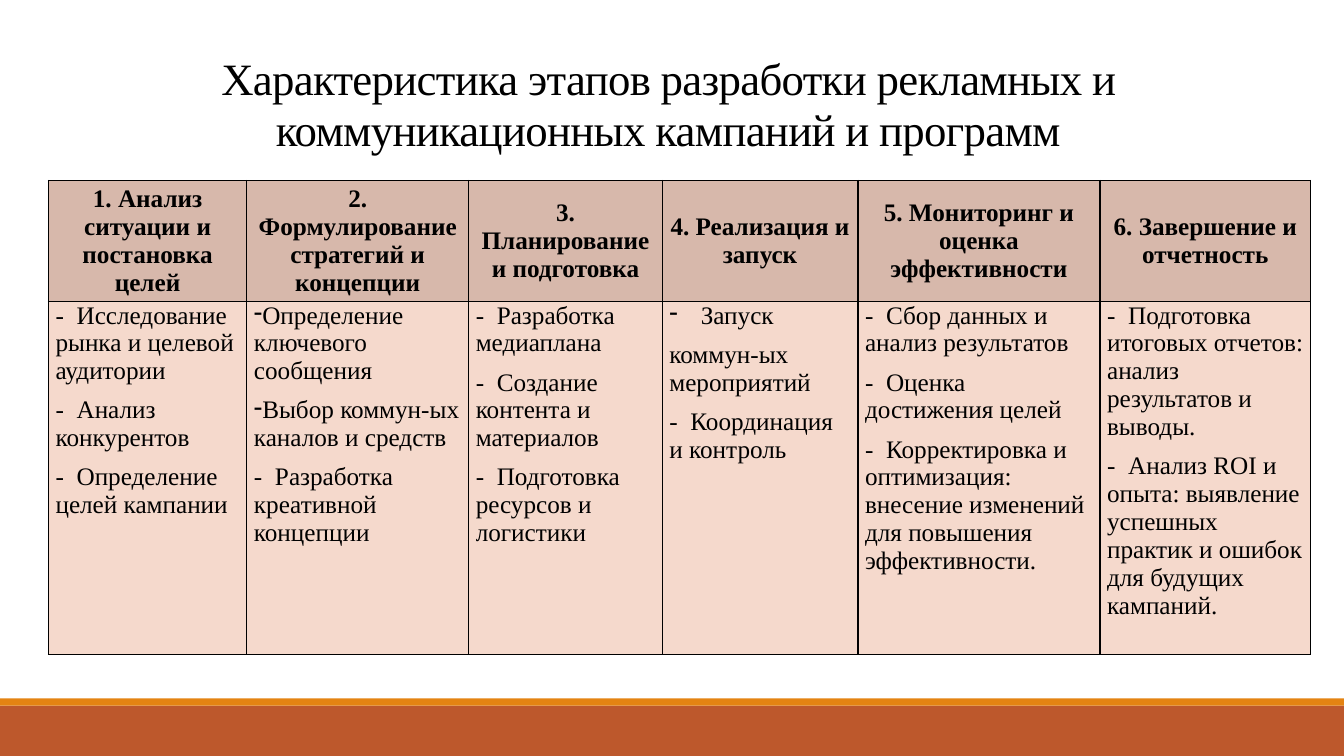
from dataclasses import dataclass

from lxml.etree import SubElement
from pptx import Presentation
from pptx.dml.color import RGBColor
from pptx.enum.shapes import MSO_SHAPE
from pptx.enum.text import MSO_ANCHOR, PP_ALIGN
from pptx.oxml.ns import qn
from pptx.oxml.xmlchemy import OxmlElement
from pptx.slide import Slide
from pptx.table import _Cell
from pptx.text.text import _Paragraph
from pptx.util import Cm, Pt

FONT = "Times New Roman"
BLACK = "000000"
HEADER_FILL = "D7B8AB"
TASKS_FILL = "F5D9CC"
SLIDE_WIDTH = 33.87
SLIDE_HEIGHT = 19.05
TITLE = ("Характеристика этапов разработки рекламных и "
         "коммуникационных кампаний и программ")


@dataclass(frozen=True)
class Band:
    top: float
    height: float
    color: str


@dataclass(frozen=True)
class Task:
    text: str
    bulleted: bool = False
    margin: float = 0


@dataclass(frozen=True)
class Stage:
    name: str
    width: float
    tasks: tuple[Task, ...]


BANDS = (Band(17.78, 1.27, "BD582C"), Band(17.6, 0.18, "E48312"))

STAGES = (
    Stage("1. Анализ ситуации и постановка целей", 5.0, (
        Task("-\tИсследование рынка и целевой аудитории"),
        Task("-\tАнализ конкурентов"),
        Task("-\tОпределение целей кампании"),
    )),
    Stage("2. Формулирование стратегий и концепции", 5.59, (
        Task("Определение ключевого сообщения", bulleted=True),
        Task("Выбор коммун-ых каналов и средств", bulleted=True),
        Task("-\tРазработка креативной концепции"),
    )),
    Stage("3. Планирование и подготовка", 4.88, (
        Task("-\tРазработка медиаплана"),
        Task("-\tСоздание контента и материалов"),
        Task("-\tПодготовка ресурсов и логистики"),
    )),
    Stage("4. Реализация и запуск", 4.93, (
        Task("Запуск", bulleted=True, margin=0.79),
        Task("коммун-ых мероприятий"),
        Task("-\tКоординация и контроль"),
    )),
    Stage("5. Мониторинг и оценка эффективности", 6.1, (
        Task("-\tСбор данных и анализ результатов"),
        Task("-\tОценка достижения целей"),
        Task("-\tКорректировка и оптимизация: внесение изменений "
             "для повышения эффективности."),
    )),
    Stage("6. Завершение и отчетность", 5.31, (
        Task("-\tПодготовка итоговых отчетов: анализ результатов и выводы."),
        Task("-\tАнализ ROI и опыта: выявление успешных практик и ошибок "
             "для будущих кампаний."),
    )),
)


def color(value: str) -> RGBColor:
    return RGBColor.from_string(value)


def set_font(paragraph: _Paragraph, size: float, bold: bool = False) -> None:
    font = paragraph.font
    font.name = FONT
    font.size = Pt(size)
    font.bold = bold
    font.color.rgb = color(BLACK)


def draw_band(slide: Slide, band: Band) -> None:
    strip = slide.shapes.add_shape(MSO_SHAPE.RECTANGLE, 0, Cm(band.top),
                                   Cm(SLIDE_WIDTH), Cm(band.height))
    strip.shadow.inherit = False
    strip.fill.solid()
    strip.fill.fore_color.rgb = color(band.color)
    strip.line.fill.background()


def draw_title(slide: Slide) -> None:
    heading = slide.shapes.add_textbox(Cm(1.88), Cm(0.79), Cm(29.92), Cm(3.76))
    frame = heading.text_frame
    frame.word_wrap = True
    frame.vertical_anchor = MSO_ANCHOR.MIDDLE
    paragraph = frame.paragraphs[0]
    paragraph.text = TITLE
    paragraph.alignment = PP_ALIGN.CENTER
    paragraph.line_spacing = 0.95
    set_font(paragraph, 32)
    paragraph.runs[0].font._element.set("spc", "-50")


def style_cell(cell: _Cell, fill: str) -> None:
    cell.margin_left = cell.margin_right = Cm(0.18)
    cell.margin_top = cell.margin_bottom = 0
    cell.fill.solid()
    cell.fill.fore_color.rgb = color(fill)
    properties = cell._tc.get_or_add_tcPr()
    for position, side in enumerate(("lnL", "lnR", "lnT", "lnB")):
        border = OxmlElement(f"a:{side}")
        border.set("w", str(Pt(1)))
        solid = SubElement(border, qn("a:solidFill"))
        SubElement(solid, qn("a:srgbClr"), val=BLACK)
        properties.insert(position, border)


def write_task(paragraph: _Paragraph, task: Task) -> None:
    paragraph.text = task.text
    paragraph.alignment = PP_ALIGN.LEFT
    paragraph.space_after = Pt(8)
    properties = paragraph._p.get_or_add_pPr()
    if task.bulleted:
        properties.set("marL", str(Cm(task.margin)))
        properties.set("indent", str(-Cm(0.79)))
        SubElement(properties, qn("a:buChar"), char="-")
    else:
        tabs = SubElement(properties, qn("a:tabLst"))
        SubElement(tabs, qn("a:tab"), pos=str(Cm(0.53)), algn="l")
    set_font(paragraph, 18)


def write_name(cell: _Cell, name: str) -> None:
    cell.vertical_anchor = MSO_ANCHOR.MIDDLE
    paragraph = cell.text_frame.paragraphs[0]
    paragraph.text = name
    paragraph.alignment = PP_ALIGN.CENTER
    set_font(paragraph, 18, bold=True)


def draw_stages(slide: Slide) -> None:
    heights = (2.79, 8.89)
    total_width = sum(stage.width for stage in STAGES)
    table = slide.shapes.add_table(2, len(STAGES), Cm(1.22), Cm(4.55),
                                   Cm(total_width), Cm(sum(heights))).table
    table.first_row = False
    table.horz_banding = False
    for row, height in zip(table.rows, heights):
        row.height = Cm(height)
    for index, stage in enumerate(STAGES):
        table.columns[index].width = Cm(stage.width)
        header, tasks = table.cell(0, index), table.cell(1, index)
        style_cell(header, HEADER_FILL)
        style_cell(tasks, TASKS_FILL)
        write_name(header, stage.name)
        frame = tasks.text_frame
        for order, task in enumerate(stage.tasks):
            paragraph = frame.add_paragraph() if order else frame.paragraphs[0]
            write_task(paragraph, task)


def main() -> None:
    presentation = Presentation()
    presentation.slide_width = Cm(SLIDE_WIDTH)
    presentation.slide_height = Cm(SLIDE_HEIGHT)
    slide = presentation.slides.add_slide(presentation.slide_layouts[6])
    for band in BANDS:
        draw_band(slide, band)
    draw_title(slide)
    draw_stages(slide)
    presentation.save("out.pptx")


if __name__ == "__main__":
    main()
